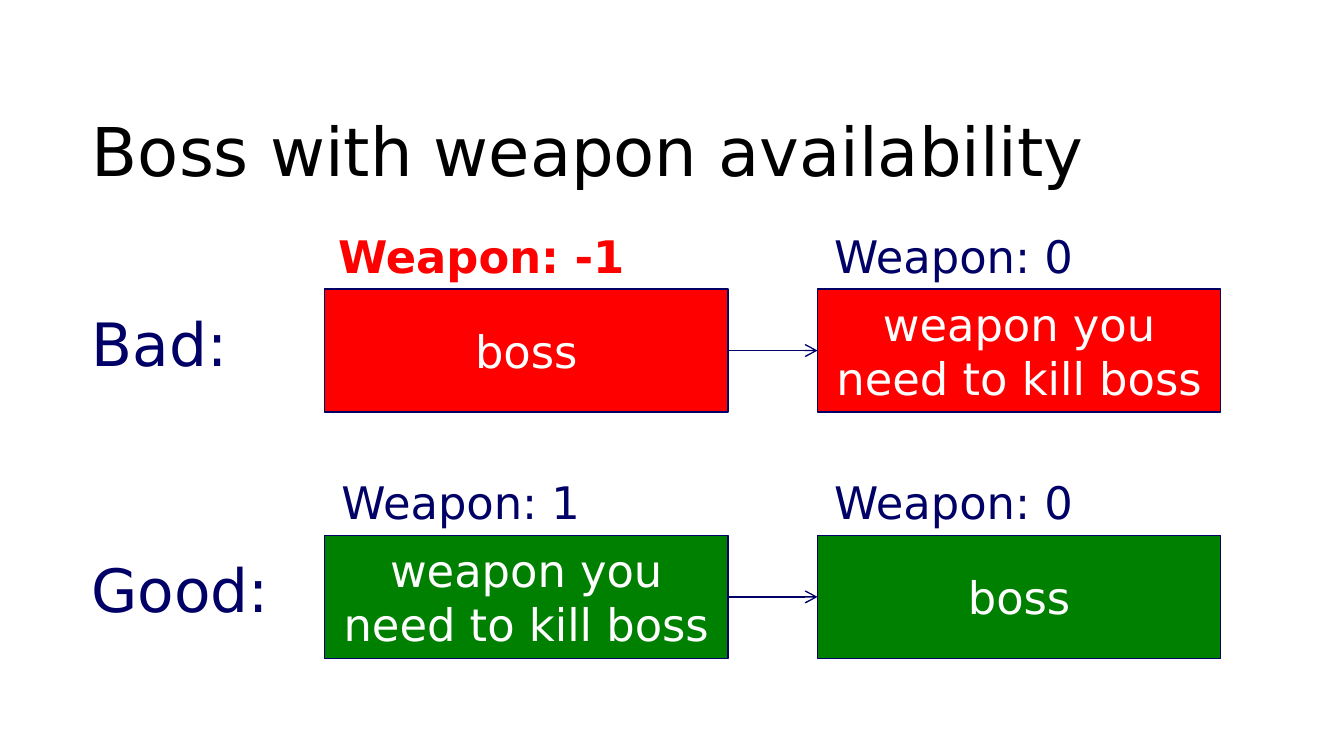
"""Build the slide on boss and weapon availability."""
import dataclasses
import typing

import pptx
import pptx.dml.color
import pptx.enum.shapes
import pptx.enum.text
import pptx.oxml
import pptx.oxml.ns
import pptx.util

FONT = "DejaVu Sans"
NAVY, RED, GREEN, WHITE, BLACK = "000066", "FF0000", "008000", "FFFFFF", "000000"
UNIT = pptx.util.Inches(1) // 12
COLS = (29, 73)
LEFT, TOP, PITCH = 7, 25.8, 22
WIDE, HIGH = 36, 11
ANCHOR = pptx.enum.text.MSO_ANCHOR
ALIGN = pptx.enum.text.PP_ALIGN


@dataclasses.dataclass
class Step:
    text: str
    label: str
    span: float = 24.4
    shift: float = 0.3
    color: str = NAVY
    bold: bool = False


@dataclasses.dataclass
class Case:
    name: str
    span: float
    fill: str
    steps: tuple[Step, Step]


KILL = "weapon you need to kill boss"
CASES = (
    Case("Bad:", 15.1, RED, (
        Step("boss", "Weapon: -1", 28.7, 0, RED, True),
        Step(KILL, "Weapon: 0"))),
    Case("Good:", 19, GREEN, (
        Step(KILL, "Weapon: 1"),
        Step("boss", "Weapon: 0"))),
)


def grid(*cells: float) -> list[int]:
    """Turn grid cells into slide lengths."""
    return [round(cell * UNIT) for cell in cells]


def paint(hue: typing.Any, code: str) -> None:
    """Set a colour from a hex string."""
    hue.rgb = pptx.dml.color.RGBColor.from_string(code)


def write(shape: typing.Any, text: str, *, size: int = 24, color: str = NAVY,
          bold: bool = False, align: typing.Any = ALIGN.LEFT,
          anchor: typing.Any = ANCHOR.TOP, wrap: bool = True) -> None:
    """Put formatted text in a shape."""
    frame = shape.text_frame
    frame.word_wrap = wrap
    frame.auto_size = (pptx.enum.text.MSO_AUTO_SIZE.NONE if wrap
                       else pptx.enum.text.MSO_AUTO_SIZE.SHAPE_TO_FIT_TEXT)
    frame.vertical_anchor = anchor
    para = frame.paragraphs[0]
    para.alignment = align
    run = para.add_run()
    run.text = text
    run.font.name, run.font.size, run.font.bold = FONT, pptx.util.Pt(size), bold
    paint(run.font.color, color)


def stroke(line: typing.Any) -> None:
    """Give a line the common thin navy style."""
    line.width = pptx.util.Pt(0.75)
    paint(line.color, NAVY)


def draw_box(slide: typing.Any, col: float, row: float, text: str, fill: str) -> None:
    """Draw a filled step box."""
    box = slide.shapes.add_shape(pptx.enum.shapes.MSO_SHAPE.RECTANGLE,
                                 *grid(col, row, WIDE, HIGH))
    box.shadow.inherit = False
    box.fill.solid()
    paint(box.fill.fore_color, fill)
    stroke(box.line)
    write(box, text, color=WHITE, align=ALIGN.CENTER, anchor=ANCHOR.MIDDLE)


def draw_arrow(slide: typing.Any, row: float) -> None:
    """Draw an arrow across the gap between the boxes."""
    arrow = slide.shapes.add_connector(
        pptx.enum.shapes.MSO_CONNECTOR.STRAIGHT,
        *grid(COLS[0] + WIDE, row, COLS[1], row))
    stroke(arrow.line)
    tip = pptx.oxml.parse_xml(
        f'<a:tailEnd {pptx.oxml.ns.nsdecls("a")} type="arrow"/>')
    arrow.line._get_or_add_ln().append(tip)
    arrow._element.spPr.append(pptx.oxml.parse_xml(
        f'<a:effectLst {pptx.oxml.ns.nsdecls("a")}/>'))


def draw_case(slide: typing.Any, case: Case, row: float) -> None:
    """Draw one named row of steps."""
    for col, step in zip(COLS, case.steps):
        draw_box(slide, col, row, step.text, case.fill)
        label = slide.shapes.add_textbox(
            *grid(col + step.shift, row - 6, step.span, 6.1))
        write(label, step.label, color=step.color, bold=step.bold, wrap=False)
    draw_arrow(slide, row + HIGH / 2)
    name = slide.shapes.add_textbox(*grid(LEFT, row + 1, case.span, 7.7))
    write(name, case.name, size=32, wrap=False)


def main() -> None:
    """Build and save the deck."""
    deck = pptx.Presentation()
    deck.slide_width, deck.slide_height = grid(120, 67.5)
    slide = deck.slides.add_slide(deck.slide_layouts[5])
    title = slide.shapes.title
    title.left, title.top, title.width, title.height = grid(LEFT, 8.8, 106, 10.2)
    write(title, "Boss with weapon availability", size=36, color=BLACK)
    title.text_frame.margin_top = grid(1)[0]
    for rank, case in enumerate(CASES):
        draw_case(slide, case, TOP + rank * PITCH)
    deck.save("out.pptx")


if __name__ == "__main__":
    main()
